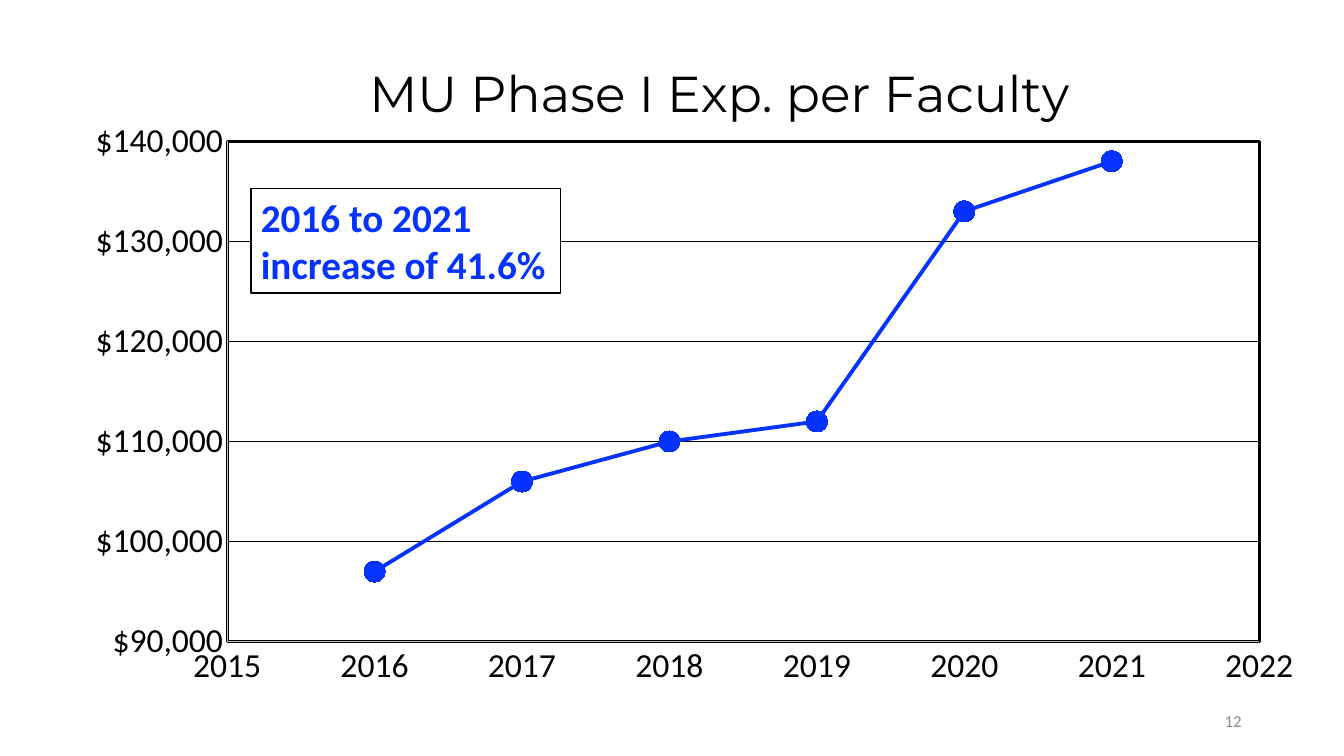
"""Build the slide charting Phase I expenditure per faculty member."""
from lxml.etree import SubElement
from pptx import Presentation
from pptx.chart.data import XyChartData
from pptx.dml.color import RGBColor
from pptx.enum.chart import XL_CHART_TYPE, XL_MARKER_STYLE, XL_TICK_MARK
from pptx.enum.shapes import MSO_SHAPE
from pptx.enum.text import MSO_ANCHOR, PP_ALIGN
from pptx.oxml import parse_xml
from pptx.oxml.ns import nsdecls, qn
from pptx.util import Pt

COLORS = {k: RGBColor.from_string(v) for k, v in {
    "black": "000000", "white": "FFFFFF", "blue": "0432FF",
    "axis": "BFBFBF", "number": "8C8C8C"}.items()}
SPENDING = {2016: 97000, 2017: 106000, 2018: 110000,
            2019: 112000, 2020: 133000, 2021: 138000}


def style(font, size, color, name="Calibri", bold=False):
    for key, value in {"size": Pt(size), "name": name, "bold": bold}.items():
        setattr(font, key, value)
    font.color.rgb = COLORS[color]


def manual_layout(parent, index, **settings):
    for old in parent.findall(qn("c:layout")):
        parent.remove(old)
    layout = parse_xml(f"<c:layout {nsdecls('c')}><c:manualLayout/></c:layout>")
    for tag, value in settings.items():
        SubElement(layout[0], qn(f"c:{tag}")).set("val", str(value))
    parent.insert(index, layout)


prs = Presentation()
prs.slide_width, prs.slide_height = Pt(960), Pt(540)
s = prs.slides.add_slide(prs.slide_layouts[6])

data = XyChartData()
series = data.add_series("Series 1")
for year, amount in SPENDING.items():
    series.add_data_point(year, amount)
chart = s.shapes.add_chart(XL_CHART_TYPE.XY_SCATTER_LINES, 0, 0,
                           prs.slide_width, prs.slide_height, data).chart
chart.has_legend = False
style(chart.font, 24, "black")

chart.has_title = True
title = chart.chart_title
title.include_in_layout = False
p = title.text_frame.paragraphs[0]
r = p.add_run()
r.text = "MU Phase I Exp. per Faculty"
style(r.font, 36, "black", "Montserrat")
manual_layout(title._element, 1, xMode="edge", yMode="edge", x=0.268, y=0.065)

plot_area = chart._chartSpace.chart.plotArea
manual_layout(plot_area, 0, layoutTarget="inner", xMode="edge", yMode="edge",
              x=0.169, y=0.187, w=0.768, h=0.662)
plot_area.append(parse_xml(
    f'<c:spPr {nsdecls("c", "a")}><a:noFill/><a:ln w="25400"><a:solidFill>'
    f'<a:srgbClr val="{COLORS["black"]}"/></a:solidFill></a:ln></c:spPr>'))

for axis, low, high, step, number_format in (
        (chart.category_axis, 2015, 2022, 1, "0"),
        (chart.value_axis, 90000, 140000, 10000, '"$"#,##0')):
    for key, value in {"minimum_scale": low, "maximum_scale": high,
                       "major_unit": step, "has_major_gridlines": False,
                       "major_tick_mark": XL_TICK_MARK.NONE,
                       "minor_tick_mark": XL_TICK_MARK.NONE}.items():
        setattr(axis, key, value)
    axis.tick_labels.number_format = number_format
    axis.tick_labels.number_format_is_linked = False
    style(axis.tick_labels.font, 24, "black")
    axis.format.line.color.rgb = COLORS["axis"]
    axis.format.line.width = Pt(0.75)
grid = chart.value_axis.major_gridlines.format.line
grid.color.rgb = COLORS["black"]
grid.width = Pt(1)

chart.plots[0].vary_by_categories = False
line = chart.plots[0].series[0]
line.smooth = False
line.format.line.color.rgb = COLORS["blue"]
line.format.line.width = Pt(2.75)
line.marker.style = XL_MARKER_STYLE.CIRCLE
line.marker.size = 15
line.marker.format.fill.solid()
line.marker.format.fill.fore_color.rgb = COLORS["blue"]
line.marker.format.line.color.rgb = COLORS["blue"]

callout = s.shapes.add_shape(MSO_SHAPE.RECTANGLE, Pt(179.3), Pt(134.6),
                             Pt(221), Pt(74.9))
callout.shadow.inherit = False
callout.fill.solid()
callout.fill.fore_color.rgb = COLORS["white"]
callout.line.color.rgb = COLORS["black"]
callout.line.width = Pt(1)
number = s.shapes.add_textbox(Pt(678), Pt(500.4), Pt(216), Pt(28.8))

for sp, text, size, color, bold, align, anchor in (
        (callout, "2016 to 2021 increase of 41.6%", 28, "blue", True,
         PP_ALIGN.LEFT, MSO_ANCHOR.TOP),
        (number, "12", 12, "number", False, PP_ALIGN.RIGHT, MSO_ANCHOR.MIDDLE)):
    tf = sp.text_frame
    tf.word_wrap = True
    tf.vertical_anchor = anchor
    p = tf.paragraphs[0]
    p.alignment = align
    r = p.add_run()
    r.text = text
    style(r.font, size, color, bold=bold)

prs.save("out.pptx")
